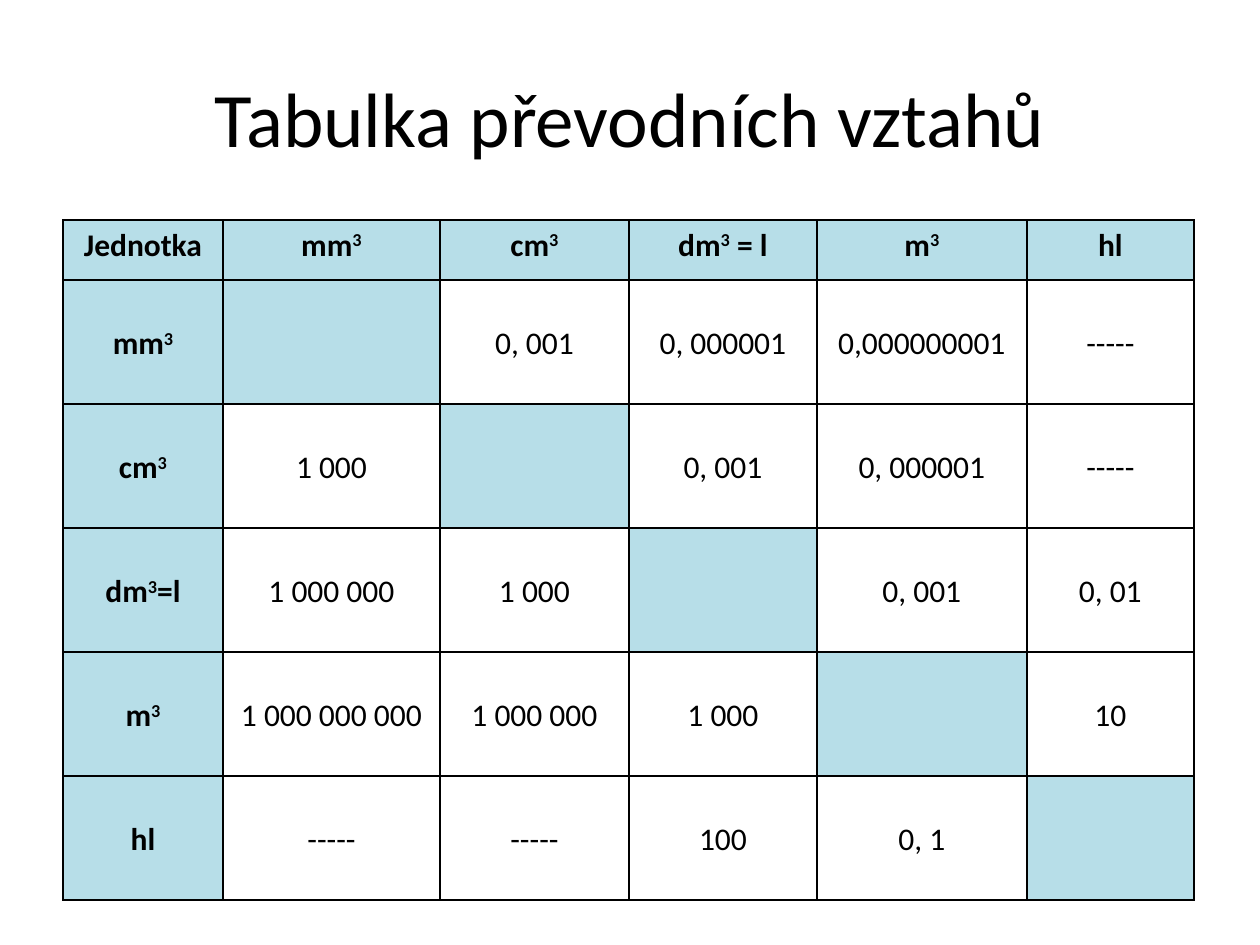
"""Build a slide with a conversion table of volume units."""
import pptx
import pptx.dml.color
import pptx.enum.text
import pptx.oxml
import pptx.oxml.ns
import pptx.util

TITLE = "Tabulka převodních vztahů"
ROWS = [
    ["Jednotka", "mm³", "cm³", "dm³ = l", "m³", "hl"],
    ["mm³", "", "0, 001", "0, 000001", "0,000000001", "-----"],
    ["cm³", "1 000", "", "0, 001", "0, 000001", "-----"],
    ["dm³=l", "1 000 000", "1 000", "", "0, 001", "0, 01"],
    ["m³", "1 000 000 000", "1 000 000", "1 000", "", "10"],
    ["hl", "-----", "-----", "100", "0, 1", ""],
]
COLUMN_WIDTHS = [160, 217, 189, 188, 210, 167]
ROW_HEIGHTS = [60] + [124] * 5
TABLE_LEFT, TABLE_TOP = 63, 220
TITLE_BOX = {"left": 63, "top": 38, "width": 1134, "height": 157}
BLACK, BLUE = "000000", "B7DEE8"
CENTER = pptx.enum.text.PP_ALIGN.CENTER
MIDDLE = pptx.enum.text.MSO_ANCHOR.MIDDLE
TOP = pptx.enum.text.MSO_ANCHOR.TOP


def px(length):
    return pptx.util.Emu(round(length * 914400 / 126))


def color(value):
    return pptx.dml.color.RGBColor.from_string(value)


def set_attributes(target, values):
    for name, value in values.items():
        setattr(target, name, value)


def add_run(paragraph, text, size, bold=False, raised=False):
    run = paragraph.add_run()
    run.text = text
    set_attributes(run.font, {"name": "Calibri", "size": pptx.util.Pt(size), "bold": bold})
    run.font.color.rgb = color(BLACK)
    if raised:
        run.font._element.set("baseline", "30000")


def add_unit_text(paragraph, text, bold):
    base, cube, rest = text.partition("³")
    for part, raised in ((base, False), (cube and "3", True), (rest, False)):
        if part:
            add_run(paragraph, part, 18, bold, raised)


def set_borders(cell):
    properties = cell._tc.get_or_add_tcPr()
    for position, side in enumerate(("lnL", "lnR", "lnT", "lnB")):
        properties.insert(position, pptx.oxml.parse_xml(
            f'<a:{side} {pptx.oxml.ns.nsdecls("a")} w="12700"><a:solidFill>'
            f'<a:srgbClr val="{BLACK}"/></a:solidFill></a:{side}>'))


def format_cell(cell, text, row, column):
    header = row == 0 or column == 0
    cell.vertical_anchor = TOP if row == 0 else MIDDLE
    if row:
        cell.margin_top = px(10)
    if header or row == column:
        cell.fill.solid()
        cell.fill.fore_color.rgb = color(BLUE)
    else:
        cell.fill.background()
    set_borders(cell)
    paragraph = cell.text_frame.paragraphs[0]
    paragraph.alignment = CENTER
    add_unit_text(paragraph, text, header)


def add_title(slide):
    title = slide.shapes.title
    set_attributes(title, {name: px(length) for name, length in TITLE_BOX.items()})
    title.text_frame.vertical_anchor = MIDDLE
    paragraph = title.text_frame.paragraphs[0]
    paragraph.alignment = CENTER
    add_run(paragraph, TITLE, 44)


def add_conversion_table(slide):
    table = slide.shapes.add_table(
        len(ROWS), len(COLUMN_WIDTHS), px(TABLE_LEFT), px(TABLE_TOP),
        px(sum(COLUMN_WIDTHS)), px(sum(ROW_HEIGHTS))).table
    set_attributes(table, {"first_row": False, "horz_banding": False})
    for column, width in zip(table.columns, COLUMN_WIDTHS):
        column.width = px(width)
    for row, height in zip(table.rows, ROW_HEIGHTS):
        row.height = px(height)
    for row, texts in enumerate(ROWS):
        for column, text in enumerate(texts):
            format_cell(table.cell(row, column), text, row, column)


def main():
    presentation = pptx.Presentation()
    set_attributes(presentation, {"slide_width": px(1260), "slide_height": px(945)})
    slide = presentation.slides.add_slide(presentation.slide_layouts[5])
    add_title(slide)
    add_conversion_table(slide)
    presentation.save("out.pptx")


if __name__ == "__main__":
    main()
